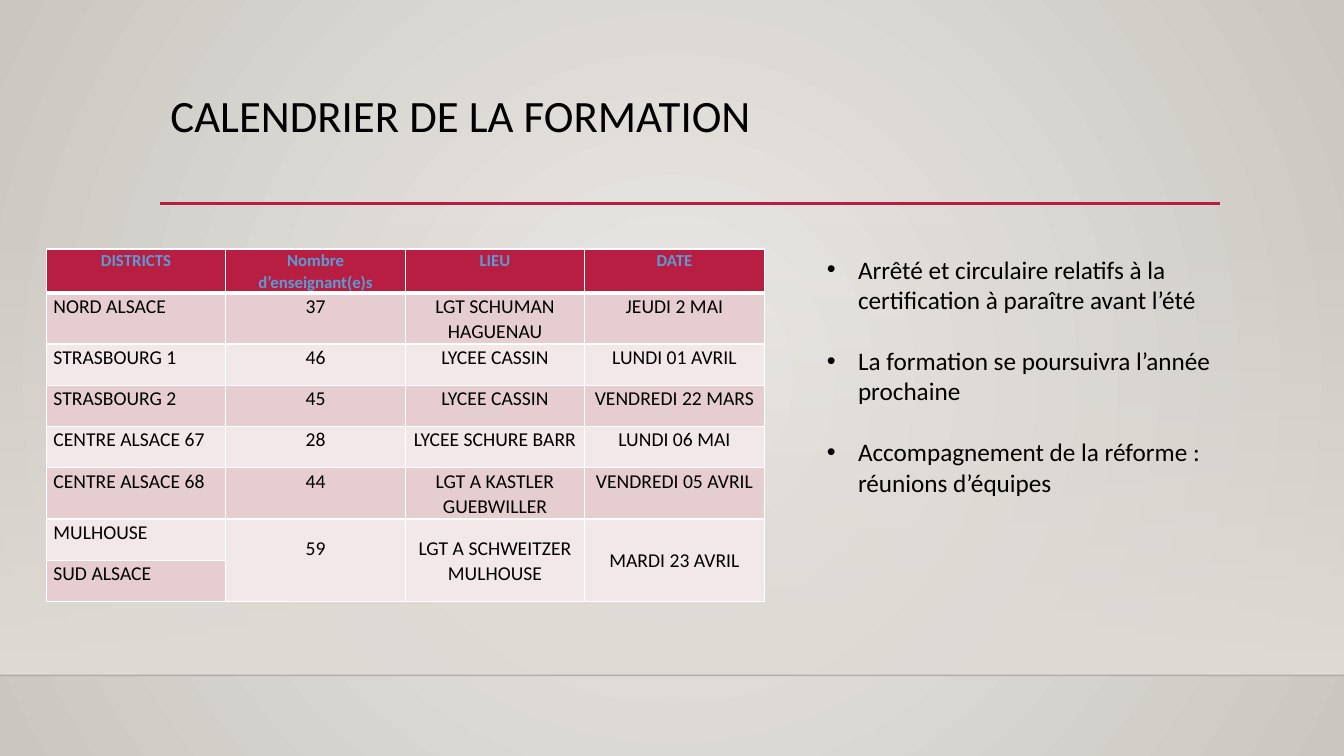
from lxml import etree
from pptx import Presentation
from pptx.dml.color import RGBColor
from pptx.enum.shapes import MSO_CONNECTOR as Connector, MSO_SHAPE as Shape
from pptx.enum.text import MSO_ANCHOR as Anchor, MSO_AUTO_SIZE as AutoSize, PP_ALIGN as Align
from pptx.oxml.ns import qn
from pptx.util import Inches, Pt

TITLE = "CALENDRIER DE LA FORMATION"
HEADERS = ["DISTRICTS", "Nombre d’enseignant(e)s", "LIEU", "DATE"]
SESSIONS = [
    ("NORD ALSACE", "37", "LGT SCHUMAN HAGUENAU", "JEUDI 2 MAI"),
    ("STRASBOURG 1", "46", "LYCEE CASSIN", "LUNDI 01 AVRIL"),
    ("STRASBOURG 2", "45", "LYCEE CASSIN", "VENDREDI 22 MARS"),
    ("CENTRE ALSACE 67", "28", "LYCEE SCHURE BARR", "LUNDI 06 MAI"),
    ("CENTRE ALSACE 68", "44", "LGT A KASTLER GUEBWILLER", "VENDREDI 05 AVRIL"),
    ("MULHOUSE", "59", "LGT A SCHWEITZER MULHOUSE", "MARDI 23 AVRIL"),
    ("SUD ALSACE",),
]
NOTES = [
    "Arrêté et circulaire relatifs à la certification à paraître avant l’été",
    "La formation se poursuivra l’année prochaine",
    "Accompagnement de la réforme : réunions d’équipes",
]
CRIMSON, BLACK, WHITE, BLUE, SAND = "B71E42", "000000", "FFFFFF", "5B9BD5", "DFDBD5"
BANDS = ["E6CDCF", "F3E8E9"]
COL_WIDTH, ROW_HEIGHT = 1.78, 0.41


def rgb(value):
    return RGBColor.from_string(value)


def place(shape, left, top, width, height):
    shape.left, shape.top, shape.width, shape.height = map(Inches, (left, top, width, height))


def set_font(paragraph, size, color=BLACK, bold=False):
    font = paragraph.font
    font.name, font.size, font.bold = "Calibri", Pt(size), bold
    font.color.rgb = rgb(color)


def set_gradient(fill, *colors):
    fill.gradient()
    for stop, color in zip(fill.gradient_stops, colors):
        stop.color.rgb = rgb(color)


def set_alpha(element, percent):
    color = next(element.iter(qn("a:srgbClr")))
    etree.SubElement(color, qn("a:alpha"), val=str(percent * 1000))


def add_rule(left, right, y, color, width):
    rule = slide.shapes.add_connector(
        Connector.STRAIGHT, Inches(left), Inches(y), Inches(right), Inches(y))
    rule.line.color.rgb = rgb(color)
    rule.line.width = Pt(width)
    etree.SubElement(rule._element.spPr, qn("a:effectLst"))
    return rule


def set_borders(cell, bottom):
    """Draw white borders of 1 pt, with the given width below."""
    props = cell._tc.get_or_add_tcPr()
    for index, (side, width) in enumerate(zip("LRTB", (1, 1, 1, bottom))):
        border = etree.Element(qn(f"a:ln{side}"), w=str(Pt(width)))
        solid = etree.SubElement(border, qn("a:solidFill"))
        etree.SubElement(solid, qn("a:srgbClr"), val=WHITE)
        props.insert(index, border)


def style_cell(cell, row, col):
    header = row == 0
    cell.margin_left = cell.margin_right = Inches(0.07)
    cell.margin_top = cell.margin_bottom = 0
    cell.fill.solid()
    cell.fill.fore_color.rgb = rgb(CRIMSON if header else BANDS[(row - 1) % 2])
    set_borders(cell, 3 if header else 1)
    paragraph = cell.text_frame.paragraphs[0]
    paragraph.alignment = Align.CENTER if header or col else Align.LEFT
    paragraph.line_spacing = 1.07
    set_font(paragraph, 12 if header else 14, BLUE if header else BLACK, header)


prs = Presentation()
prs.slide_width, prs.slide_height = Inches(13.33), Inches(7.5)
slide = prs.slides.add_slide(prs.slide_layouts[1])
title, notes = slide.placeholders

# Backdrop
set_gradient(slide.background.fill, "ECEAE7", "CAC7C1")
radial = next(slide._element.iter(qn("a:gradFill")))
radial.remove(radial.find(qn("a:lin")))
circle = etree.SubElement(radial, qn("a:path"), path="circle")
etree.SubElement(circle, qn("a:fillToRect"), {side: "50000" for side in "ltrb"})

wall = slide.shapes.add_shape(Shape.RECTANGLE, 0, Inches(2.21), prs.slide_width, Inches(4.49))
wall.shadow.inherit = False
wall.line.fill.background()
set_gradient(wall.fill, SAND, SAND)
wall.fill.gradient_angle = 270
set_alpha(wall._element.spPr, 0)

floor_line = add_rule(0, 13.33, 6.7, "000001", 1)
set_alpha(floor_line._element.spPr, 20)
add_rule(1.59, 12.1, 2.02, CRIMSON, 2.5)

# Title and notes stand in front of the backdrop
for placeholder in (title, notes):
    slide.shapes._spTree.append(placeholder._element)

place(title, 1.59, 0.88, 10.5, 1.15)
title.text_frame.text = TITLE
title.text_frame.vertical_anchor = Anchor.TOP
title.text_frame.auto_size = AutoSize.NONE
heading = title.text_frame.paragraphs[0]
heading.alignment = Align.LEFT
heading.line_spacing = 0.9
set_font(heading, 32)

place(notes, 8.1, 2.47, 4.68, 2.52)
notes.text_frame.auto_size = AutoSize.NONE
notes.text_frame.text = "\n".join(NOTES)
for index, paragraph in enumerate(notes.text_frame.paragraphs):
    props = paragraph._p.get_or_add_pPr()
    props.set("marL", str(Inches(0.31)))
    props.set("indent", str(-Inches(0.31)))
    etree.SubElement(props, qn("a:buFont"), typeface="Arial")
    etree.SubElement(props, qn("a:buChar"), char="•")
    paragraph.space_before = Pt(22 if index else 0)
    set_font(paragraph, 18)

# Calendar
rows = [HEADERS, *SESSIONS]
calendar = slide.shapes.add_table(
    len(rows), len(HEADERS), Inches(0.46), Inches(2.47),
    Inches(COL_WIDTH * len(HEADERS)), Inches(ROW_HEIGHT * len(rows))).table
for row, texts in enumerate(rows):
    for col in range(len(HEADERS)):
        cell = calendar.cell(row, col)
        if col < len(texts):
            cell.text = texts[col]
        style_cell(cell, row, col)

last = len(rows) - 1
for col in range(1, len(HEADERS)):
    shared = calendar.cell(last - 1, col)
    shared.merge(calendar.cell(last, col))
    shared.vertical_anchor = Anchor.MIDDLE
calendar.cell(last - 1, 1).margin_bottom = Inches(0.25)

prs.save("out.pptx")
